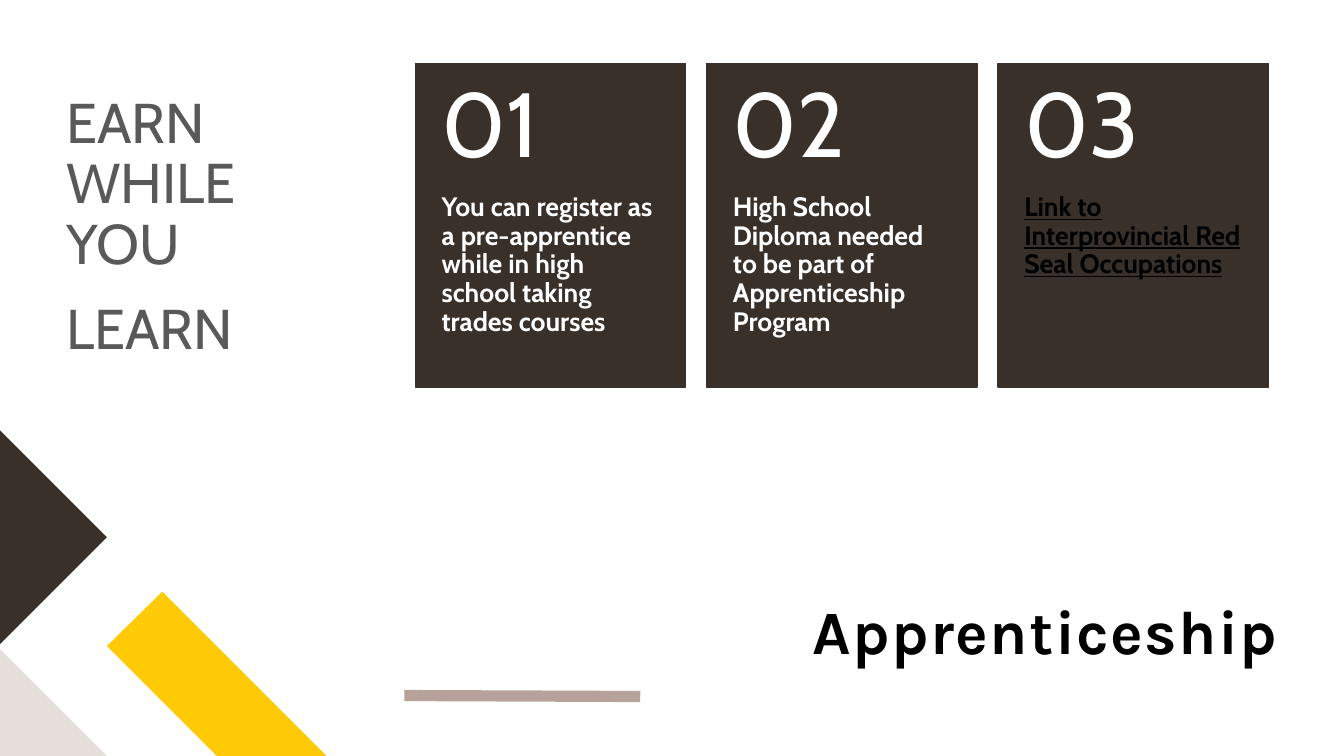
from dataclasses import dataclass

from lxml.etree import SubElement
from pptx import Presentation
from pptx.dml.color import RGBColor as RGB
from pptx.enum.shapes import MSO_CONNECTOR as CONN, MSO_SHAPE as SHAPE
from pptx.enum.text import MSO_ANCHOR as ANCHOR, PP_ALIGN as ALIGN
from pptx.oxml.ns import qn
from pptx.util import Pt

PX = 9144


@dataclass(frozen=True)
class Theme:
    dark: str = "39302A"
    yellow: str = "FFCA08"
    pale: str = "E5DEDB"
    taupe: str = "B6A29A"
    grey: str = "595959"
    black: str = "000000"
    white: str = "FFFFFF"
    title_font: str = "Karla"
    body_font: str = "Cabin"
    title_size: int = 44
    lead_size: int = 40
    number_size: int = 65
    card_size: int = 19


class Deck:
    """Draws themed elements on one slide, with lengths in px."""

    def __init__(self, theme, width, height):
        self.theme = theme
        self.prs = Presentation()
        self.prs.slide_width, self.prs.slide_height = width * PX, height * PX
        self.slide = self.prs.slides.add_slide(self.prs.slide_layouts[6])
        self.shapes = self.slide.shapes

    def polygon(self, points, color):
        builder = self.shapes.build_freeform(*points[0], scale=PX)
        builder.add_line_segments(points[1:], close=True)
        sp = builder.convert_to_shape()
        sp.shadow.inherit = False
        sp.fill.solid()
        sp.fill.fore_color.rgb = RGB.from_string(color)
        sp.line.fill.background()

    def rule(self, x1, y1, x2, y2, color, weight):
        ends = [v * PX for v in (x1, y1, x2, y2)]
        line = self.shapes.add_connector(CONN.STRAIGHT, *ends)
        line.line.color.rgb = RGB.from_string(color)
        line.line.width = Pt(weight)
        SubElement(line._element.spPr, qn("a:effectLst"))

    def panel(self, box, color):
        sp = self.shapes.add_shape(SHAPE.RECTANGLE, *[v * PX for v in box])
        sp.shadow.inherit = False
        sp.fill.solid()
        sp.fill.fore_color.rgb = RGB.from_string(color)
        sp.line.color.rgb = RGB.from_string(color)
        sp.line.width = Pt(1)

    def text(self, box, lines, size, color, font=None, bold=False,
             underline=False, inset=(0, 0, 0, 0), anchor=ANCHOR.TOP,
             align=ALIGN.LEFT, leading=0.9, before=0, tracking=0):
        tf = self.shapes.add_textbox(*[v * PX for v in box]).text_frame
        tf.word_wrap = True
        tf.vertical_anchor = anchor
        (tf.margin_left, tf.margin_top,
         tf.margin_right, tf.margin_bottom) = [v * PX for v in inset]
        for i, line in enumerate(lines):
            p = tf.add_paragraph() if i else tf.paragraphs[0]
            p.alignment, p.line_spacing = align, leading
            if i and before:
                p.space_before = Pt(before)
            r = p.add_run()
            r.text = line
            r.font.name = font or self.theme.body_font
            r.font.size = Pt(size)
            r.font.bold, r.font.underline = bold, underline
            r.font.color.rgb = RGB.from_string(color)
            if tracking:
                r.font._element.set("spc", str(tracking * 100))

    def card(self, x, number, body, color, underline):
        t = self.theme
        self.panel((x, 63, 268, 321), t.dark)
        self.text((x, 192, 268, 193), [body], t.card_size, color, bold=True,
                  underline=underline, inset=(26, 0, 26, 36))
        self.text((x, 63, 268, 128), [number], t.number_size, t.white,
                  inset=(26, 18, 26, 18), anchor=ANCHOR.MIDDLE)


def main():
    t = Theme()
    deck = Deck(t, 1333, 750)

    deck.polygon([(324, 750), (215, 750), (106, 641), (161, 587)], t.yellow)
    deck.polygon([(106, 750), (0, 750), (0, 644)], t.pale)
    deck.polygon([(0, 427), (106, 533), (0, 639)], t.dark)
    deck.rule(401, 690, 635, 691, t.taupe, 8)

    deck.text((400, 510, 868, 151), ["Apprenticeship"], t.title_size, t.black,
              font=t.title_font, bold=True, anchor=ANCHOR.BOTTOM,
              align=ALIGN.RIGHT, leading=0.8, tracking=1)
    deck.text((66, 64, 250, 336), ["EARN WHILE YOU", "LEARN"], t.lead_size,
              t.grey, inset=(0, 30, 10, 5), before=18)

    cards = [
        ("You can register as a pre-apprentice while in high school "
         "taking trades courses", t.white, False),
        ("High School Diploma needed to be part of Apprenticeship Program",
         t.white, False),
        ("Link to Interprovincial Red Seal Occupations", t.black, True),
    ]
    for i, (body, color, underline) in enumerate(cards):
        deck.card(412 + 289 * i, f"{i + 1:02}", body, color, underline)

    deck.prs.save("out.pptx")


if __name__ == "__main__":
    main()
